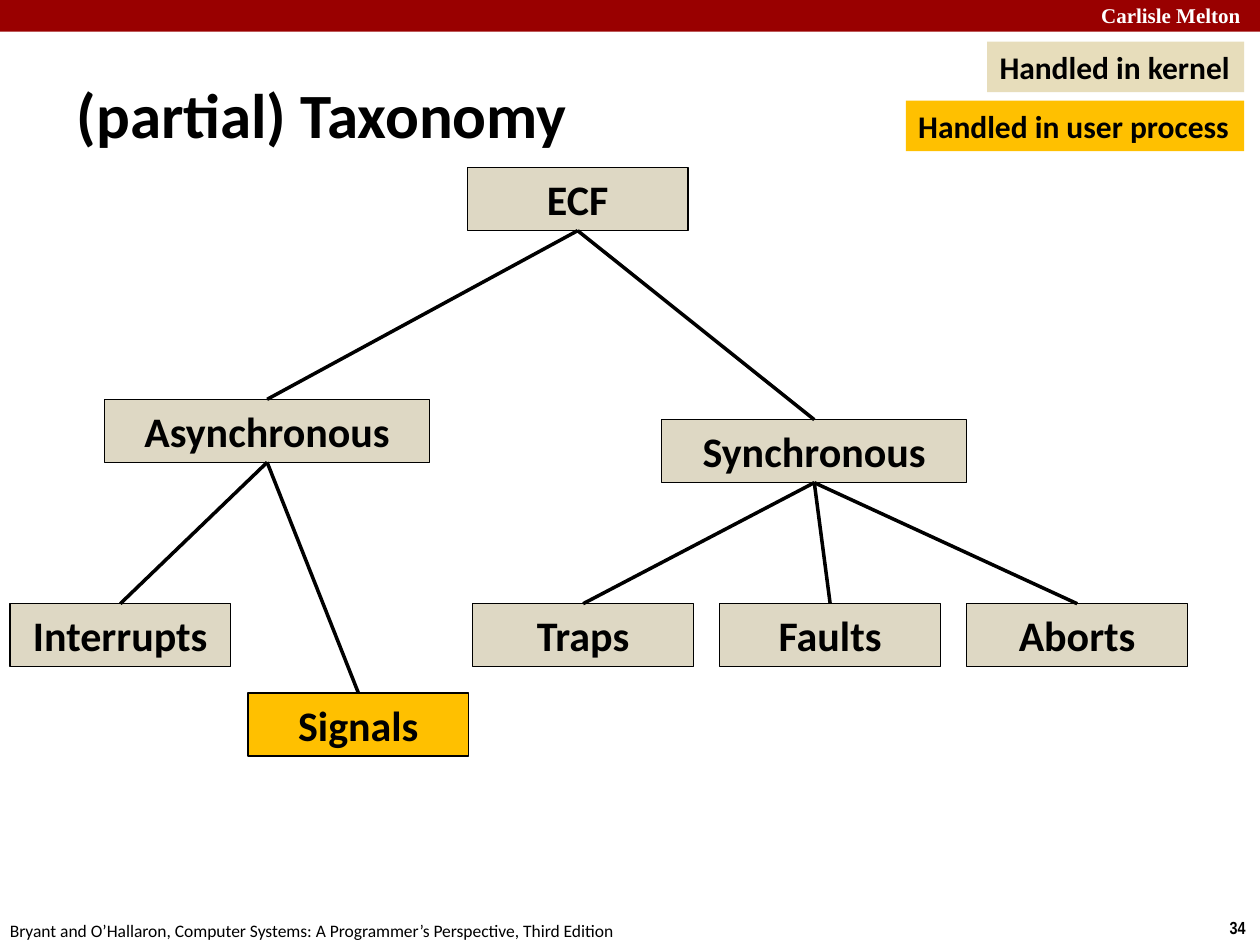
import pptx
import pptx.dml.color
import pptx.enum.shapes
import pptx.enum.text
import pptx.oxml.ns
import pptx.util
from dataclasses import dataclass
from pptx.util import Cm

ALIGN = pptx.enum.text.PP_ALIGN
ANCHOR = pptx.enum.text.MSO_ANCHOR


@dataclass(frozen=True)
class Theme:
    band: str = "990000"
    kernel: str = "DED8C4"
    kernel_key: str = "E7DDBB"
    user: str = "FFC000"
    ink: str = "000000"
    paper: str = "FFFFFF"
    body_font: str = "Calibri"
    brand_font: str = "Times New Roman"
    number_font: str = "Arial Narrow"
    title_size: int = 36
    node_size: int = 24
    key_size: int = 18
    brand_size: int = 12
    footer_size: int = 10
    border: float = 0.75
    branch: float = 2


THEME = Theme()
NODE_HEIGHT = 1.27
LEAF_WIDTH = 4.45
LEAF_TOP = 12.17


def rgb(color):
    return pptx.dml.color.RGBColor.from_string(color)


def write(shape, text, size, bold=True, font=THEME.body_font, color=THEME.ink,
          align=ALIGN.LEFT, anchor=ANCHOR.TOP, wrap=True):
    frame = shape.text_frame
    frame.word_wrap = wrap
    frame.vertical_anchor = anchor
    paragraph = frame.paragraphs[0]
    paragraph.alignment = align
    run = paragraph.add_run()
    run.text = text
    run.font.size = pptx.util.Pt(size)
    run.font.bold = bold
    run.font.name = font
    run.font.color.rgb = rgb(color)


def add_label(slide, left, top, width, height, text, size, **style):
    label = slide.shapes.add_textbox(Cm(left), Cm(top), Cm(width), Cm(height))
    write(label, text, size, **style)
    return label


def add_box(slide, left, top, width, height, fill, bordered=False):
    box = slide.shapes.add_shape(pptx.enum.shapes.MSO_SHAPE.RECTANGLE,
                                 Cm(left), Cm(top), Cm(width), Cm(height))
    box.shadow.inherit = False
    box.fill.solid()
    box.fill.fore_color.rgb = rgb(fill)
    if bordered:
        box.line.color.rgb = rgb(THEME.ink)
        box.line.width = pptx.util.Pt(THEME.border)
    else:
        box.line.fill.background()
    return box


def add_node(slide, text, left, top, width=LEAF_WIDTH, fill=THEME.kernel):
    node = add_box(slide, left, top, width, NODE_HEIGHT, fill, bordered=True)
    write(node, text, THEME.node_size, align=ALIGN.CENTER, anchor=ANCHOR.MIDDLE)
    return node


def add_key(slide, text, left, top, width, fill):
    key = add_box(slide, left, top, width, 1.02, fill)
    write(key, text, THEME.key_size, anchor=ANCHOR.MIDDLE, wrap=False)


def add_branch(slide, parent, child):
    branch = slide.shapes.add_connector(
        pptx.enum.shapes.MSO_CONNECTOR.STRAIGHT, 0, 0, 0, 0)
    branch.begin_connect(parent, 2)
    branch.end_connect(child, 0)
    branch.line.color.rgb = rgb(THEME.ink)
    branch.line.width = pptx.util.Pt(THEME.branch)
    properties = branch._element.spPr
    properties.append(properties.makeelement(pptx.oxml.ns.qn("a:effectLst"), {}))


def add_frame(slide):
    add_box(slide, 0, 0, 25.4, 0.64, THEME.band)
    add_label(slide, 21.95, -0.08, 3.63, 0.76, "Carlisle Melton", THEME.brand_size,
              font=THEME.brand_font, color=THEME.paper, wrap=False)
    add_label(slide, 24.54, 18.36, 0.86, 0.69, "34", THEME.footer_size,
              font=THEME.number_font, wrap=False)
    add_label(slide, -0.05, 18.42, 12.9, 0.69,
              "Bryant and O’Hallaron, Computer Systems: "
              "A Programmer’s Perspective, Third Edition",
              THEME.footer_size, bold=False, wrap=False)
    title = add_label(slide, 0.99, 1.22, 21.08, 2.11, "(partial) Taxonomy",
                      THEME.title_size, anchor=ANCHOR.MIDDLE)
    title.text_frame.margin_left = Cm(0.56)


def add_taxonomy(slide):
    ecf = add_node(slide, "ECF", 9.42, 3.38)
    asynchronous = add_node(slide, "Asynchronous", 2.11, 8.05, 6.55)
    synchronous = add_node(slide, "Synchronous", 13.34, 8.46, 6.15)
    interrupts = add_node(slide, "Interrupts", 0.2, LEAF_TOP)
    signals = add_node(slide, "Signals", 5, 13.97, fill=THEME.user)
    exceptions = [add_node(slide, name, 9.53 + 4.98 * column, LEAF_TOP)
                  for column, name in enumerate(("Traps", "Faults", "Aborts"))]

    families = ((ecf, (asynchronous, synchronous)),
                (asynchronous, (interrupts, signals)),
                (synchronous, exceptions))
    for parent, children in families:
        for child in children:
            add_branch(slide, parent, child)


def main():
    deck = pptx.Presentation()
    deck.slide_width, deck.slide_height = Cm(25.4), Cm(19.05)
    slide = deck.slides.add_slide(deck.slide_layouts[6])

    # Header band, title and footer
    add_frame(slide)
    # Tree of exceptional control flow
    add_taxonomy(slide)
    # Colour key
    add_key(slide, "Handled in user process", 18.26, 2.03, 6.82, THEME.user)
    add_key(slide, "Handled in kernel", 19.9, 0.84, 5.18, THEME.kernel_key)

    deck.save("out.pptx")


if __name__ == "__main__":
    main()
